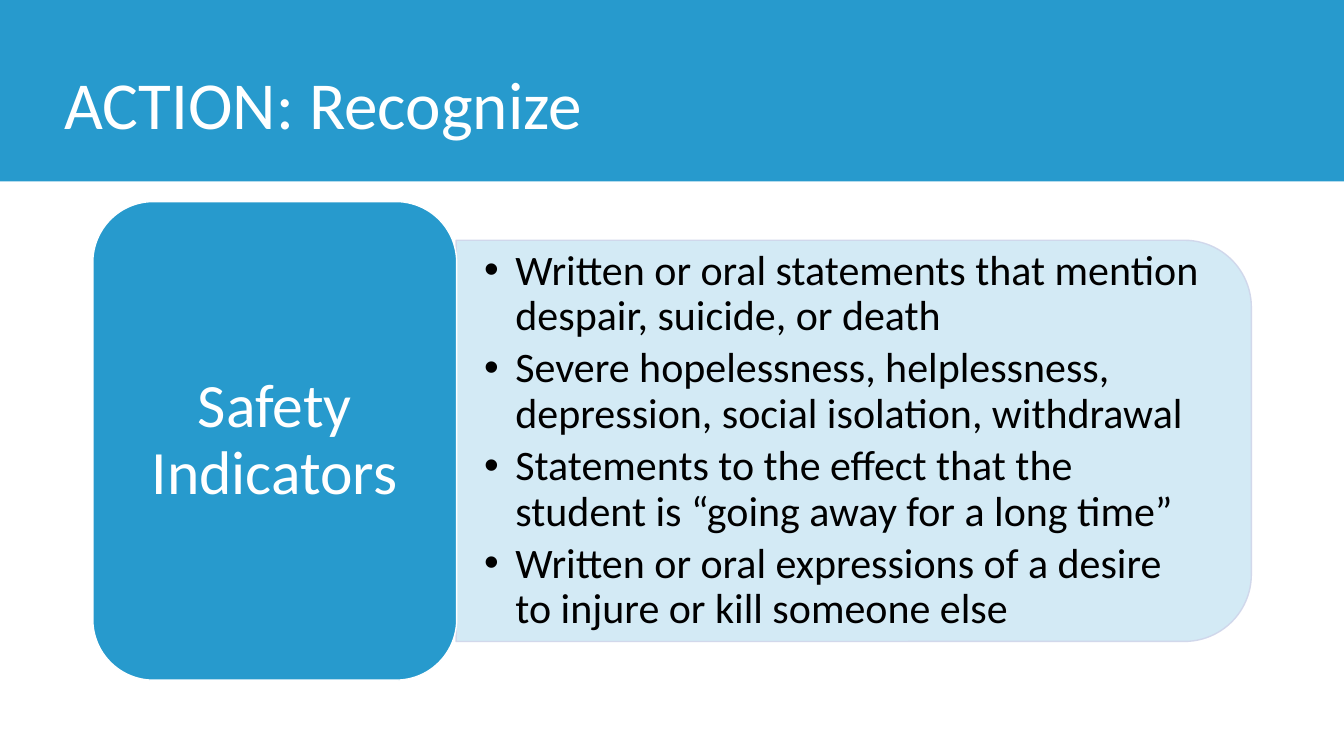
from dataclasses import dataclass

from lxml.etree import SubElement
from pptx import Presentation
from pptx.dml.color import RGBColor
from pptx.enum.shapes import MSO_SHAPE
from pptx.enum.text import MSO_ANCHOR, MSO_AUTO_SIZE, PP_ALIGN
from pptx.oxml.ns import qn
from pptx.util import Cm, Pt


@dataclass(frozen=True)
class Theme:
    blue: RGBColor = RGBColor(0x27, 0x9A, 0xCD)
    outline: RGBColor = RGBColor(0xCF, 0xD5, 0xEA)
    white: RGBColor = RGBColor(0xFF, 0xFF, 0xFF)
    black: RGBColor = RGBColor(0, 0, 0)
    font: str = "Calibri"
    title_size: Pt = Pt(48)
    label_size: Pt = Pt(44)
    list_size: Pt = Pt(30)


THEME = Theme()
INDICATORS = [
    "Written or oral statements that mention despair, suicide, or death",
    "Severe hopelessness, helplessness, depression, social isolation, withdrawal",
    "Statements to the effect that the student is “going away for a long time”",
    "Written or oral expressions of a desire to injure or kill someone else",
]


def add_block(shapes, preset, left, top, width, height, line=None):
    block = shapes.add_shape(preset, Cm(left), Cm(top), Cm(width), Cm(height))
    block.shadow.inherit = False
    block.fill.solid()
    block.fill.fore_color.rgb = THEME.blue
    if line is None:
        block.line.fill.background()
    else:
        block.line.color.rgb = line
        block.line.width = Pt(1)
    return block


def write(frame, paragraphs, size, color, align, margins, gap=0, bullet=False):
    """Fill a frame with one run per paragraph; margins are (sides, top and bottom) in cm."""
    frame.word_wrap = True
    frame.auto_size = MSO_AUTO_SIZE.NONE
    frame.vertical_anchor = MSO_ANCHOR.MIDDLE
    frame.margin_left = frame.margin_right = Cm(margins[0])
    frame.margin_top = frame.margin_bottom = Cm(margins[1])
    for index, text in enumerate(paragraphs):
        paragraph = frame.add_paragraph() if index else frame.paragraphs[0]
        paragraph.alignment = align
        paragraph.line_spacing = 0.9
        paragraph.space_before = Pt(0)
        paragraph.space_after = Pt(gap)
        if bullet:
            properties = paragraph._p.get_or_add_pPr()
            properties.set("marL", str(Cm(0.79)))
            properties.set("indent", str(-Cm(0.79)))
            SubElement(properties, qn("a:buChar"), char="•")
        run = paragraph.add_run()
        run.text = text
        run.font.name = THEME.font
        run.font.size = size
        run.font.color.rgb = color


presentation = Presentation()
presentation.slide_width = Cm(33.87)
presentation.slide_height = Cm(19.05)
slide = presentation.slides.add_slide(presentation.slide_layouts[1])
shapes = slide.shapes
title, indicator_list = shapes.title, slide.placeholders[1]

add_block(shapes, MSO_SHAPE.RECTANGLE, 0, 0, 33.87, 4.57)

# The panel is a shape with two rounded top corners, turned to face right
panel = add_block(shapes, MSO_SHAPE.ROUND_2_SAME_RECTANGLE,
                  16.46, 1.09, 10.11, 20.04, THEME.outline)
panel.rotation = 90
for color, opacity in ((panel.fill.fore_color, 20000), (panel.line.color, 90000)):
    color_element = color._xFill.find(qn("a:srgbClr"))
    SubElement(color_element, qn("a:alpha"), val=str(opacity))

label = add_block(shapes, MSO_SHAPE.ROUNDED_RECTANGLE, 2.34, 5.08, 9.17, 12.06, THEME.white)
write(label.text_frame, ["Safety", "Indicators"], THEME.label_size, THEME.white,
      PP_ALIGN.CENTER, (0.46, 0.23))

# Bring both placeholders in front of the blocks
for placeholder, box in ((indicator_list, (11.51, 6.55, 19.53, 9.12)),
                         (title, (1.37, 0.94, 29.97, 3.56))):
    placeholder.left, placeholder.top, placeholder.width, placeholder.height = map(Cm, box)
    shapes._spTree.append(placeholder._element)

write(indicator_list.text_frame, INDICATORS, THEME.list_size, THEME.black,
      PP_ALIGN.LEFT, (0.69, 0.36), gap=5, bullet=True)
write(title.text_frame, ["ACTION: Recognize"], THEME.title_size, THEME.white,
      PP_ALIGN.LEFT, (0.25, 0.13))

presentation.save("out.pptx")
